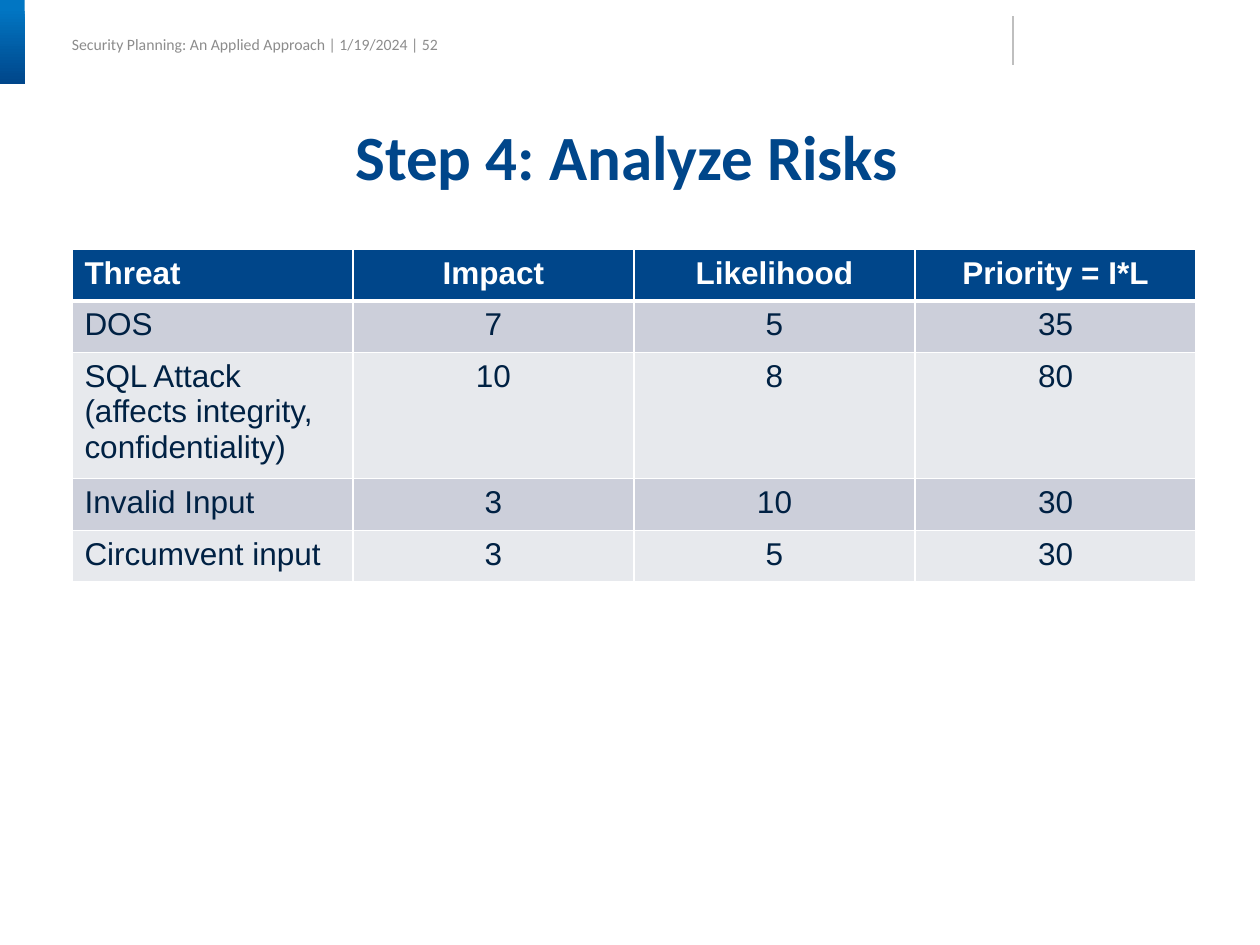
from dataclasses import dataclass

from lxml import etree
from pptx import Presentation
from pptx import util as u
from pptx.dml import color
from pptx.enum import shapes, text
from pptx.oxml import ns


@dataclass(frozen=True)
class Theme:
    navy: str = "00468A"
    blue: str = "0176C3"
    ink: str = "002143"
    white: str = "FFFFFF"
    gray: str = "8C8C8C"
    rule: str = "BFBFBF"
    bands: tuple = ("CCCFDA", "E7E9ED")
    heading_font: str = "Calibri"
    table_font: str = "Arial"
    title_size: int = 36
    table_size: int = 18
    header_size: int = 9


T = Theme()
LEFT, WIDTH = 1.45, 22.66  # shared content column, cm

RISKS = [
    ("Threat", "Impact", "Likelihood", "Priority = I*L"),
    ("DOS", "7", "5", "35"),
    ("SQL Attack\n(affects integrity, confidentiality)", "10", "8", "80"),
    ("Invalid Input", "3", "10", "30"),
    ("Circumvent input", "3", "5", "30"),
]
ROW_HEIGHTS = (1.04, 1.04, 2.54, 1.04, 1.04)


def rgb(value):
    return color.RGBColor.from_string(value)


def add_run(p, words, size, font, ink, bold=False):
    r = p.add_run()
    r.text = words
    r.font.size, r.font.name, r.font.bold = u.Pt(size), font, bold
    r.font.color.rgb = rgb(ink)


def clear_insets(tf):
    tf.margin_left = tf.margin_right = tf.margin_top = tf.margin_bottom = 0


def set_borders(cell, bottom_width):
    """Draw white lines on all four sides; they come before the fill in the XML."""
    tc_pr = cell._tc.get_or_add_tcPr()
    for i, side in enumerate(("lnL", "lnR", "lnT", "lnB")):
        width = bottom_width if side == "lnB" else 1
        ln = etree.Element(ns.qn(f"a:{side}"), w=str(u.Pt(width)))
        fill = etree.SubElement(ln, ns.qn("a:solidFill"))
        etree.SubElement(fill, ns.qn("a:srgbClr"), val=T.white)
        tc_pr.insert(i, ln)


def add_header(s, x, y, w, h):
    # Gradient tab in the corner
    sp = s.shapes.add_shape(shapes.MSO_SHAPE.RECTANGLE, u.Cm(x), u.Cm(y), u.Cm(0.5), u.Cm(h))
    sp.shadow.inherit = False
    sp.line.fill.background()
    sp.fill.gradient()
    sp.fill.gradient_angle = 270
    for stop, position, value in zip(sp.fill.gradient_stops, (0.1, 1), (T.blue, T.navy)):
        stop.position = position
        stop.color.rgb = rgb(value)

    # Running header
    box = s.shapes.add_textbox(u.Cm(x + LEFT), u.Cm(y + 0.6), u.Cm(7.6), u.Cm(0.58))
    tf = box.text_frame
    tf.word_wrap = True
    tf.vertical_anchor = text.MSO_ANCHOR.MIDDLE
    clear_insets(tf)
    add_run(tf.paragraphs[0], "Security Planning: An Applied Approach | 1/19/2024 | 52",
            T.header_size, T.heading_font, T.gray)

    # Vertical rule
    rule_x = u.Cm(x + w * 0.804)
    line = s.shapes.add_connector(shapes.MSO_CONNECTOR.STRAIGHT,
                                  rule_x, u.Cm(y + 0.33), rule_x, u.Cm(y + 1.32))
    line.line.color.rgb = rgb(T.rule)
    line.line.width = u.Pt(0.75)
    etree.SubElement(line._element.spPr, ns.qn("a:effectLst"))


def place_title(s, x, y, w, h):
    title = s.shapes.title
    title.left, title.top, title.width, title.height = map(u.Cm, (x, y, w, h))
    tf = title.text_frame
    clear_insets(tf)
    tf.vertical_anchor = text.MSO_ANCHOR.TOP
    p = tf.paragraphs[0]
    p.alignment = text.PP_ALIGN.CENTER
    p.line_spacing = 0.9
    add_run(p, "Step 4: Analyze Risks ", T.title_size, T.heading_font, T.navy, True)


def add_risk_table(s, x, y, w):
    columns = len(RISKS[0])
    frame = s.shapes.add_table(len(RISKS), columns, u.Cm(x), u.Cm(y),
                               u.Cm(w), u.Cm(sum(ROW_HEIGHTS)))
    table = frame.table
    for column in table.columns:
        column.width = u.Cm(w / columns)
    for i, (values, height) in enumerate(zip(RISKS, ROW_HEIGHTS)):
        table.rows[i].height = u.Cm(height)
        head = i == 0
        for j, value in enumerate(values):
            cell = table.cell(i, j)
            cell.fill.solid()
            cell.fill.fore_color.rgb = rgb(T.navy if head else T.bands[(i - 1) % 2])
            set_borders(cell, 3 if head else 1)
            tf = cell.text_frame
            for k, words in enumerate(value.split("\n")):
                p = tf.add_paragraph() if k else tf.paragraphs[0]
                p.alignment = text.PP_ALIGN.CENTER if j else text.PP_ALIGN.LEFT
                add_run(p, words, T.table_size, T.table_font,
                        T.white if head else T.ink, head)


def main():
    prs = Presentation()
    prs.slide_width, prs.slide_height = u.Cm(25.4), u.Cm(19.05)
    s = prs.slides.add_slide(prs.slide_layouts[5])
    add_header(s, 0, 0, 25.4, 1.7)
    place_title(s, LEFT, 2.54, WIDTH, 1.4)
    add_risk_table(s, LEFT, 5.03, WIDTH)
    prs.save("out.pptx")


if __name__ == "__main__":
    main()
